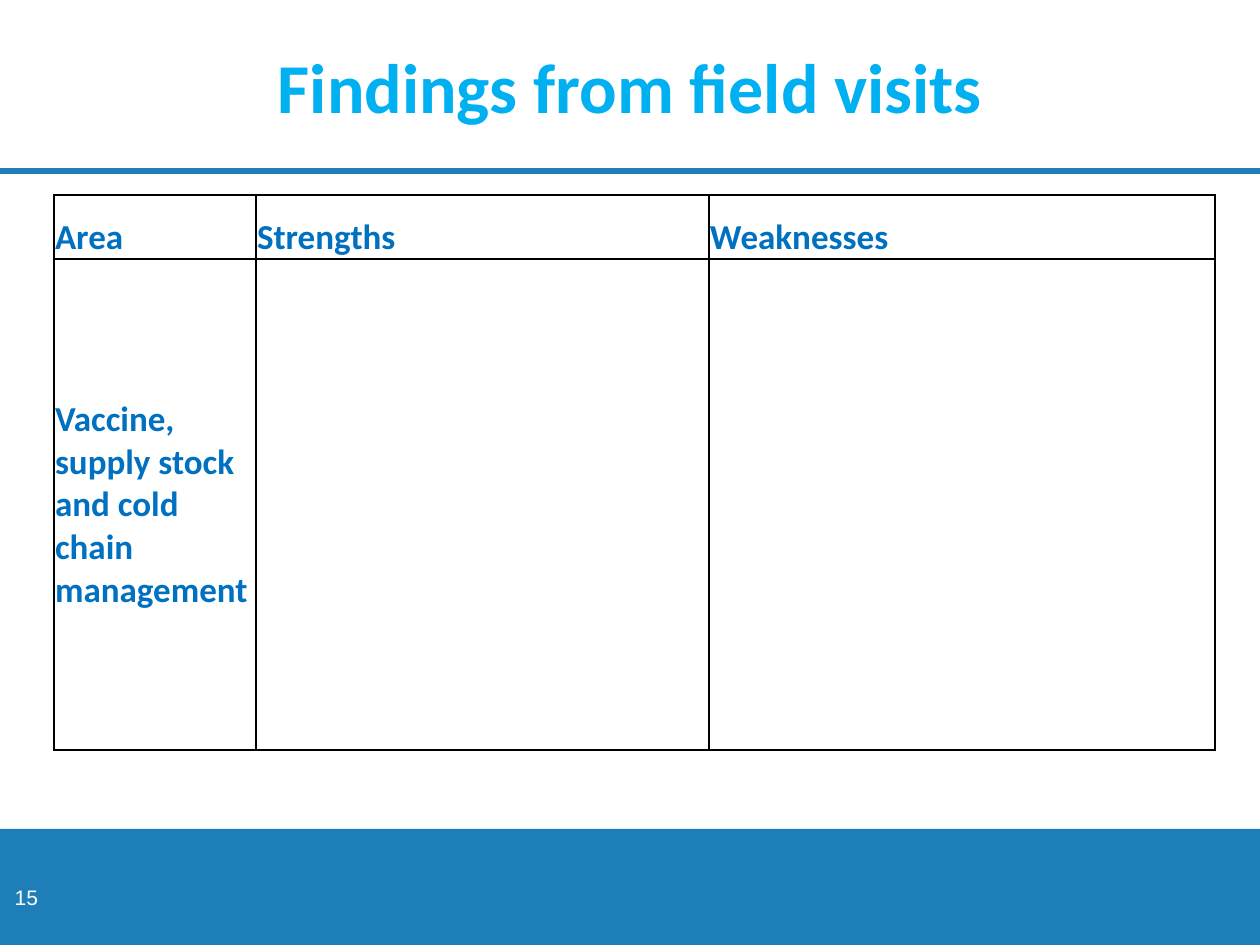
"""Build the field visit findings slide with its table of strengths and weaknesses."""
from dataclasses import dataclass

from lxml import etree
from pptx import Presentation
from pptx import util as u
from pptx.dml.color import RGBColor
from pptx.enum import shapes, text
from pptx.oxml import parse_xml
from pptx.oxml.ns import nsdecls, qn

PX_PER_INCH = 126
WHITE = RGBColor(0xFF, 0xFF, 0xFF)
BLACK = RGBColor(0x00, 0x00, 0x00)
BAND_BLUE = RGBColor(0x1E, 0x7F, 0xB8)
TITLE_BLUE = RGBColor(0x00, 0xB0, 0xF0)
TABLE_BLUE = RGBColor(0x00, 0x70, 0xC0)

COLUMNS = (202, 453, 506)
ROWS = (64, 491)
CELLS = (
    ("Area", "Strengths", "Weaknesses"),
    ("Vaccine, supply stock and cold chain management", "", ""),
)
ANCHORS = (text.MSO_ANCHOR.BOTTOM, text.MSO_ANCHOR.MIDDLE)


@dataclass(frozen=True)
class Area:
    left: int
    top: int
    width: int
    height: int

    def emu(self) -> tuple:
        return tuple(map(px, (self.left, self.top, self.width, self.height)))


@dataclass(frozen=True)
class Label:
    words: str
    area: Area
    inset: tuple
    anchor: text.MSO_ANCHOR
    style: dict


LABELS = (
    Label("Findings from field visits", Area(0, 0, 1260, 170), (0, 0), text.MSO_ANCHOR.MIDDLE,
          dict(size=40, color=TITLE_BLUE, bold=True, align=text.PP_ALIGN.CENTER, shadow=True)),
    Label("15", Area(-79, 880, 128, 65), (11, 5), text.MSO_ANCHOR.TOP,
          dict(size=12, color=WHITE, font="Arial", align=text.PP_ALIGN.RIGHT)),
)


def px(length: int) -> u.Emu:
    return u.Emu(round(length * 914400 / PX_PER_INCH))


def write(frame, words: str, *, size: int, color: RGBColor, font: str = "Calibri",
          bold: bool = False, align=text.PP_ALIGN.LEFT, shadow: bool = False) -> None:
    para = frame.paragraphs[0]
    para.alignment = align
    span = para.add_run()
    span.text = words
    span.font.size = u.Pt(size)
    span.font.bold = bold
    span.font.name = font
    span.font.color.rgb = color
    if shadow:
        effect = parse_xml(
            f'<a:effectLst {nsdecls("a")}><a:outerShdw blurRad="38100" dist="38100" dir="2700000">'
            '<a:srgbClr val="000000"><a:alpha val="43000"/></a:srgbClr></a:outerShdw></a:effectLst>')
        span.font._element.find(qn("a:solidFill")).addnext(effect)


def add_label(page, label: Label) -> None:
    box = page.shapes.add_textbox(*label.area.emu())
    frame = box.text_frame
    frame.word_wrap = True
    frame.vertical_anchor = label.anchor
    frame.margin_left = frame.margin_right = px(label.inset[0])
    frame.margin_top = frame.margin_bottom = px(label.inset[1])
    write(frame, label.words, **label.style)


def add_rule(page, top: int) -> None:
    rule = page.shapes.add_connector(
        shapes.MSO_CONNECTOR.STRAIGHT, 0, px(top), px(1260), px(top))
    rule.line.color.rgb = BAND_BLUE
    rule.line.width = u.Pt(3)
    etree.SubElement(rule._element.spPr, qn("a:effectLst"))


def add_band(page, area: Area) -> None:
    band = page.shapes.add_shape(shapes.MSO_SHAPE.RECTANGLE, *area.emu())
    band.shadow.inherit = False
    band.fill.solid()
    band.fill.fore_color.rgb = BAND_BLUE
    band.line.fill.background()


def add_borders(cell) -> None:
    properties = cell._tc.get_or_add_tcPr()
    for index, side in enumerate(("lnL", "lnR", "lnT", "lnB")):
        properties.insert(index, parse_xml(
            f'<a:{side} {nsdecls("a")} w="{u.Pt(1)}"><a:solidFill>'
            f'<a:srgbClr val="{BLACK}"/></a:solidFill></a:{side}>'))


def add_findings(page, left: int, top: int) -> None:
    area = Area(left, top, sum(COLUMNS), sum(ROWS))
    table = page.shapes.add_table(len(ROWS), len(COLUMNS), *area.emu()).table
    table.first_row = table.horz_banding = False
    for column, width in zip(table.columns, COLUMNS):
        column.width = px(width)
    for row, height, entries, anchor in zip(table.rows, ROWS, CELLS, ANCHORS):
        row.height = px(height)
        for cell, words in zip(row.cells, entries):
            cell.fill.background()
            cell.vertical_anchor = anchor
            cell.margin_left = cell.margin_right = cell.margin_top = px(1)
            cell.margin_bottom = 0
            add_borders(cell)
            if words:
                write(cell.text_frame, words, size=20, color=TABLE_BLUE, bold=True)


def main() -> None:
    deck = Presentation()
    deck.slide_width, deck.slide_height = px(1260), px(945)
    page = deck.slides.add_slide(deck.slide_layouts[6])
    add_rule(page, 171)
    add_band(page, Area(0, 829, 1260, 116))
    for label in LABELS:
        add_label(page, label)
    add_findings(page, 54, 195)
    deck.save("out.pptx")


if __name__ == "__main__":
    main()
